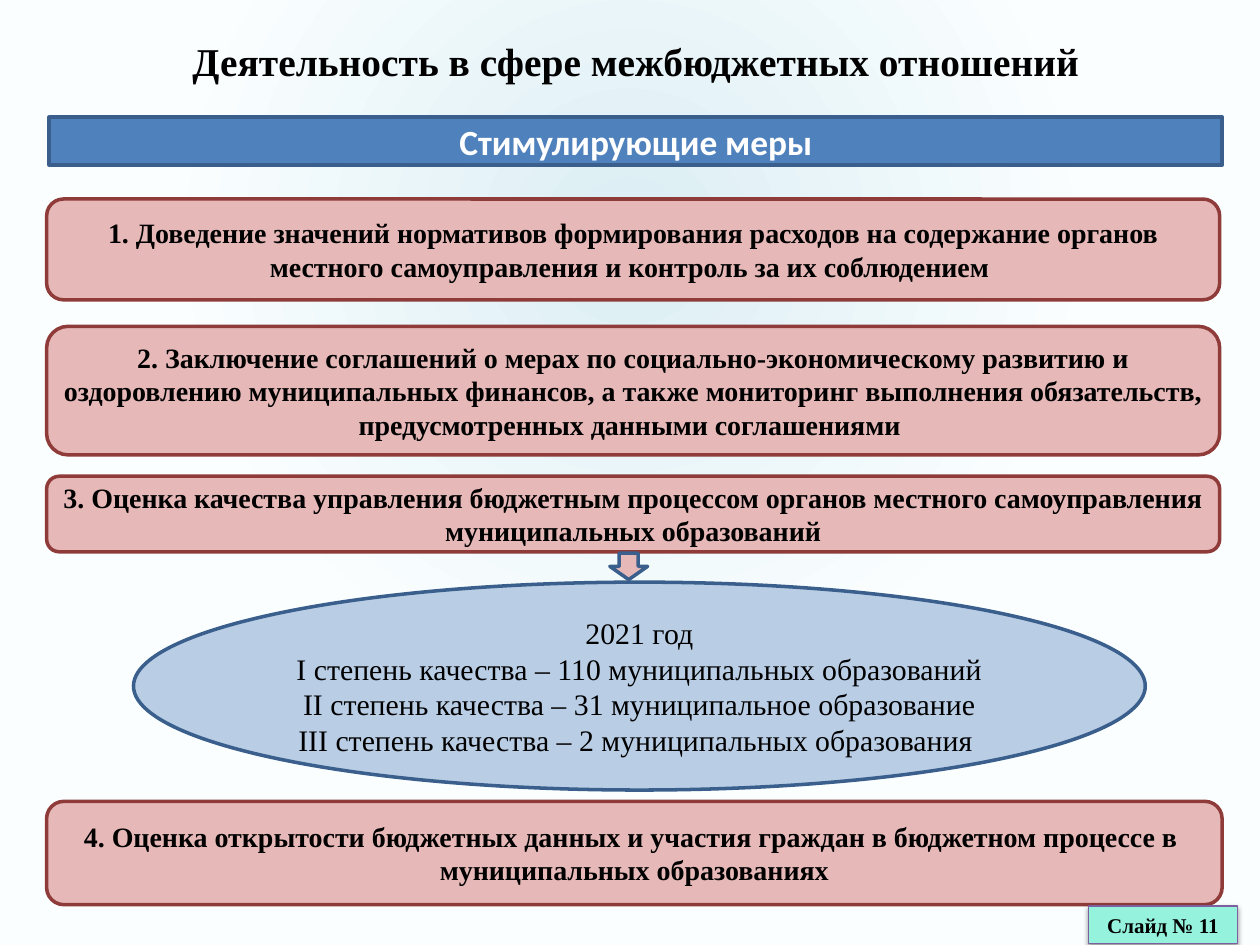
from pptx import Presentation
from pptx import util as u
from pptx.dml.color import RGBColor
from pptx.enum import shapes, text
from pptx.oxml import parse_xml
from pptx.oxml.ns import nsdecls, qn

BLACK = RGBColor(0x00, 0x00, 0x00)
WHITE = RGBColor(0xFF, 0xFF, 0xFF)
BLUE = RGBColor(0x4F, 0x81, 0xBD)
NAVY = RGBColor(0x3A, 0x5F, 0x8C)
PALE_BLUE = RGBColor(0xB9, 0xCD, 0xE5)
PINK = RGBColor(0xE6, 0xB9, 0xB8)
MAROON = RGBColor(0x8E, 0x3B, 0x39)
MINT = RGBColor(0x95, 0xF3, 0xDD)
PURPLE = RGBColor(0x7D, 0x60, 0xA0)
GLOW_CENTER = RGBColor(0xDB, 0xEE, 0xF4)
GLOW_EDGE = RGBColor(0xFB, 0xFE, 0xFF)

SHAPE = shapes.MSO_SHAPE
MIDDLE = text.MSO_ANCHOR.MIDDLE
TOP = text.MSO_ANCHOR.TOP


class SlideBuilder:
    serif = "Times New Roman"
    sans = "Calibri"

    def __init__(self, slide):
        self.slide = slide

    def background(self, center, edge):
        fill = self.slide.background.fill
        fill.gradient()
        linear = self.slide.element.find(".//" + qn("a:gradFill"))
        stops = "".join(
            f'<a:gs pos="{pos * 1000}"><a:srgbClr val="{color}"/></a:gs>'
            for pos, color in ((0, center), (60, edge), (100, edge))
        )
        radial = parse_xml(
            f'<a:gradFill {nsdecls("a")} rotWithShape="1"><a:gsLst>{stops}</a:gsLst>'
            '<a:path path="circle"><a:fillToRect l="20000" t="10000" r="20000" b="60000"/>'
            "</a:path></a:gradFill>"
        )
        linear.getparent().replace(linear, radial)

    def label(self, shape, lines, size, font=serif, color=BLACK, bold=True, anchor=MIDDLE):
        frame = shape.text_frame
        frame.word_wrap = True
        frame.vertical_anchor = anchor
        frame.margin_left = frame.margin_right = u.Inches(0.08)
        for index, line in enumerate(lines):
            paragraph = frame.add_paragraph() if index else frame.paragraphs[0]
            paragraph.alignment = text.PP_ALIGN.CENTER
            run = paragraph.add_run()
            run.text = line
            run.font.name = font
            run.font.size = u.Pt(size)
            run.font.bold = bold
            run.font.color.rgb = color

    def title(self, box, line):
        heading = self.slide.shapes.add_textbox(*map(u.Inches, box))
        self.label(heading, [line], 22.5)

    def block(self, kind, box, fill, line, width=2):
        block = self.slide.shapes.add_shape(kind, *map(u.Inches, box))
        block.shadow.inherit = False
        block.fill.solid()
        block.fill.fore_color.rgb = fill
        block.line.color.rgb = line
        block.line.width = u.Pt(width)
        return block

    def measure(self, top, width, height, lines):
        box = (0.37, top, width, height)
        self.label(self.block(SHAPE.ROUNDED_RECTANGLE, box, PINK, MAROON), lines, 16)

    def badge(self, box, line):
        badge = self.block(SHAPE.RECTANGLE, box, MINT, PURPLE, 0.75)
        effects = badge.element.spPr.find(qn("a:effectLst"))
        effects.append(parse_xml(
            f'<a:outerShdw {nsdecls("a")} blurRad="{u.Pt(3.1)}" dist="{u.Pt(1.6)}" '
            'dir="5400000" rotWithShape="0"><a:srgbClr val="000000">'
            '<a:alpha val="38000"/></a:srgbClr></a:outerShdw>'
        ))
        self.label(badge, [line], 12, anchor=TOP)


MEASURES = [
    (1.58, 9.31, 0.8, [
        "1. Доведение значений нормативов формирования расходов на содержание органов "
        "местного самоуправления и контроль за их соблюдением "]),
    (2.59, 9.31, 1.02, [
        "2. Заключение соглашений о мерах по социально-экономическому развитию и "
        "оздоровлению муниципальных финансов, а также мониторинг выполнения "
        "обязательств, предусмотренных данными соглашениями "]),
    (3.78, 9.31, 0.6, [
        "3. Оценка качества управления бюджетным процессом органов местного "
        "самоуправления муниципальных образований"]),
    (6.36, 9.33, 0.82, [
        "4. Оценка открытости бюджетных данных и участия граждан в бюджетном процессе в ",
        "муниципальных образованиях"]),
]

QUALITY_RESULTS = [
    "2021 год",
    "I степень качества – 110 муниципальных образований",
    "II степень качества – 31 муниципальное образование",
    "III степень качества – 2 муниципальных образования ",
]


def main():
    deck = Presentation()
    deck.slide_width = u.Inches(10)
    deck.slide_height = u.Inches(7.5)
    builder = SlideBuilder(deck.slides.add_slide(deck.slide_layouts[6]))

    builder.background(GLOW_CENTER, GLOW_EDGE)
    builder.title((0.63, 0.24, 8.84, 0.48), "Деятельность в сфере межбюджетных отношений")
    banner = builder.block(SHAPE.RECTANGLE, (0.39, 0.93, 9.31, 0.38), BLUE, NAVY)
    builder.label(banner, ["Стимулирующие меры"], 20.2, builder.sans, WHITE)
    for measure in MEASURES:
        builder.measure(*measure)
    results = builder.block(SHAPE.OVAL, (1.06, 4.62, 8.03, 1.65), PALE_BLUE, NAVY)
    builder.label(results, QUALITY_RESULTS, 17, bold=False)
    builder.block(SHAPE.DOWN_ARROW, (4.84, 4.39, 0.3, 0.21), PINK, NAVY)
    builder.badge((8.64, 7.19, 1.18, 0.3), "Слайд № 11")

    deck.save("out.pptx")


if __name__ == "__main__":
    main()
